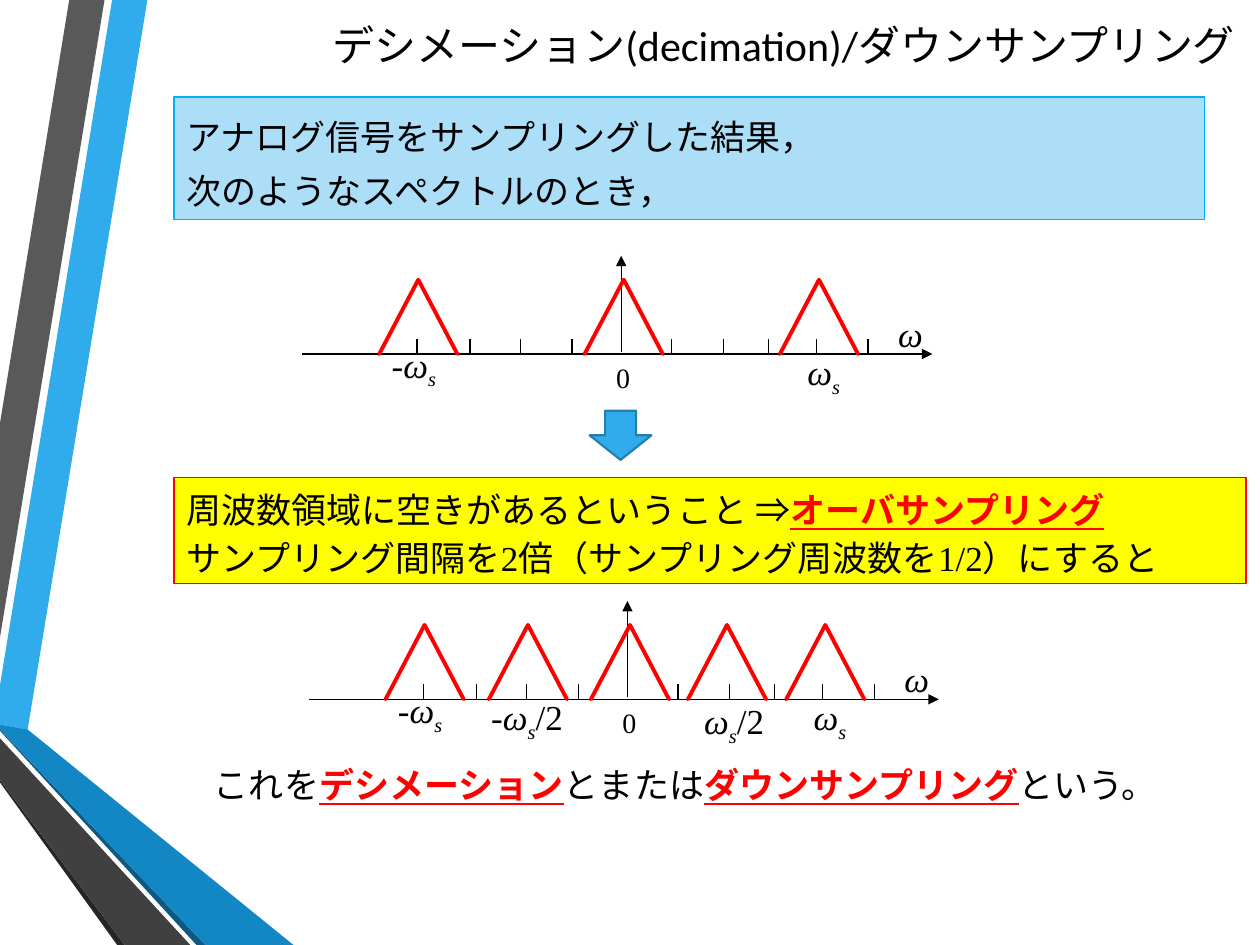
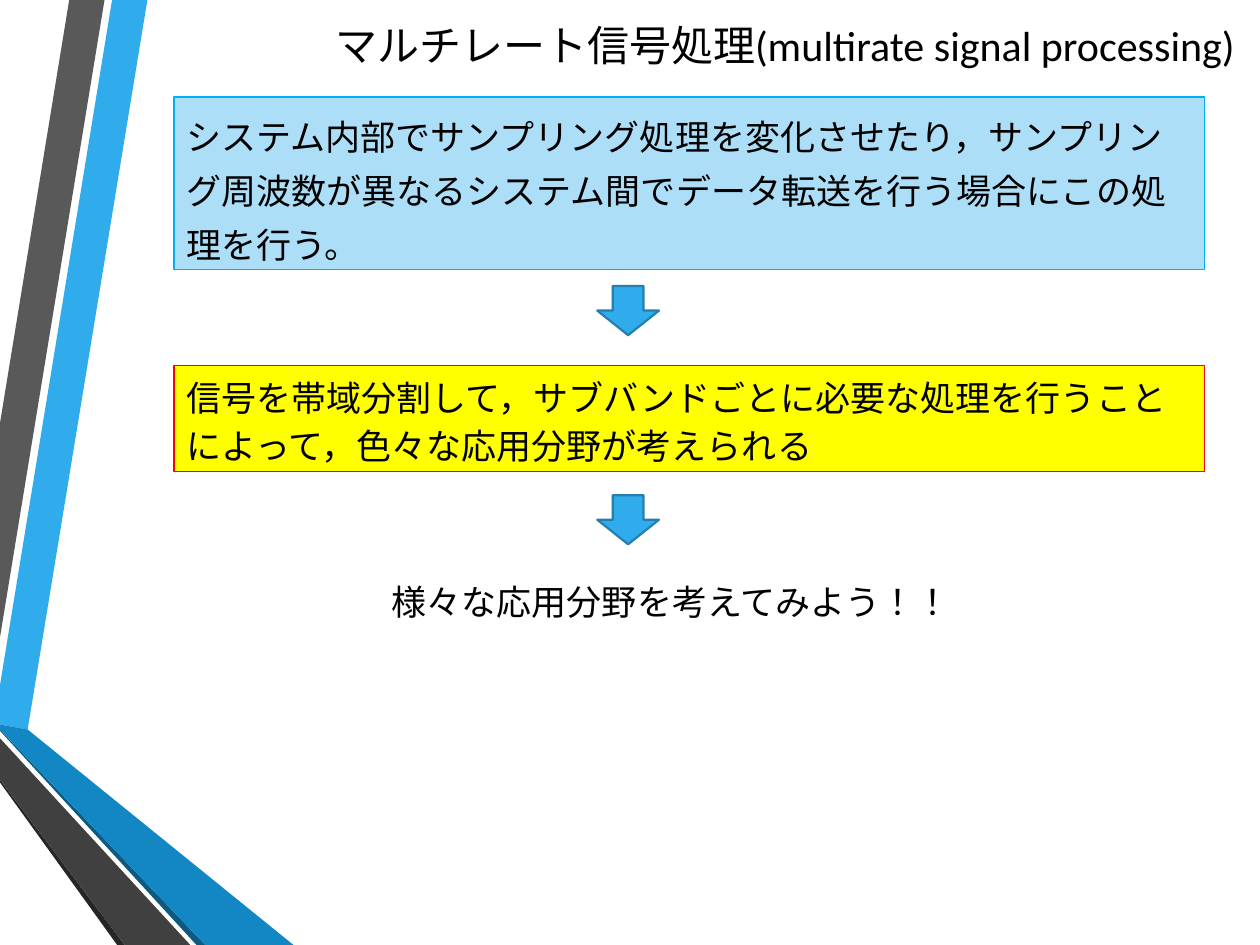
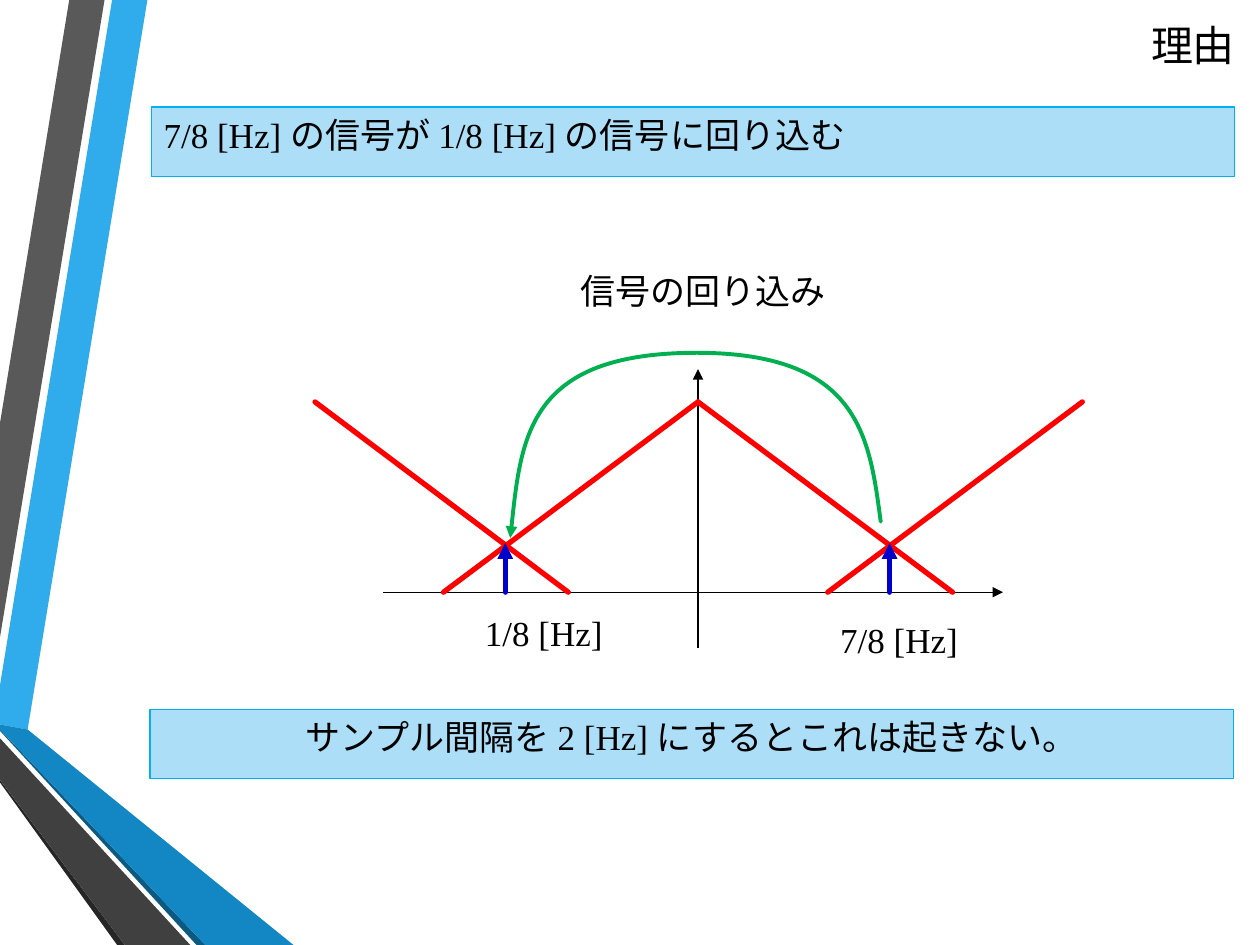
"""Build three slides on decimation and multirate signal processing."""
from dataclasses import dataclass

from lxml import etree
from pptx import Presentation
from pptx.dml.color import RGBColor
from pptx.enum.lang import MSO_LANGUAGE_ID
from pptx.enum.shapes import MSO_CONNECTOR, MSO_SHAPE
from pptx.enum.text import MSO_ANCHOR, PP_ALIGN
from pptx.oxml.ns import qn
from pptx.util import Inches, Pt

JAPANESE = MSO_LANGUAGE_ID.JAPANESE
STRAIGHT = MSO_CONNECTOR.STRAIGHT
RECTANGLE, DOWN_ARROW = MSO_SHAPE.RECTANGLE, MSO_SHAPE.DOWN_ARROW
MIDDLE = MSO_ANCHOR.MIDDLE
LEFT, CENTER, RIGHT = PP_ALIGN.LEFT, PP_ALIGN.CENTER, PP_ALIGN.RIGHT


@dataclass(frozen=True)
class Theme:
    ink: str = "000000"
    key: str = "FF0000"
    sky: str = "30ACEC"
    arrow_edge: str = "247FAF"
    pale: str = "ACDEF7"
    pale_edge: str = "00B0F0"
    yellow: str = "FFFF00"
    tone: str = "0000CC"
    wrap: str = "00B050"
    title_font: str = "Calibri"
    body_font: str = "Times New Roman"
    title_size: int = 24
    body_size: int = 20
    zero_size: int = 16


THEME = Theme()
PALE = (THEME.pale, THEME.pale_edge)
YELLOW = (THEME.yellow, THEME.key)


def add_text(slide, box, paragraphs, spacing=24, align=LEFT, panel=None,
             font=THEME.body_font, size=THEME.body_size):
    place = [Inches(length) for length in box]
    if panel:
        shape = slide.shapes.add_shape(RECTANGLE, *place)
        shape.shadow.inherit = False
        shape.fill.solid()
        shape.fill.fore_color.rgb = RGBColor.from_string(panel[0])
        shape.line.color.rgb = RGBColor.from_string(panel[1])
        shape.line.width = Pt(0.75)
    else:
        shape = slide.shapes.add_textbox(*place)
    frame = shape.text_frame
    frame.word_wrap = True
    frame.vertical_anchor = MSO_ANCHOR.TOP
    for index, runs in enumerate(paragraphs):
        paragraph = frame.paragraphs[0] if index == 0 else frame.add_paragraph()
        paragraph.alignment = align
        if spacing:
            paragraph.line_spacing = Pt(spacing)
        paragraph.font.name = font
        paragraph.font.size = Pt(size)
        paragraph.font.color.rgb = RGBColor.from_string(THEME.ink)
        paragraph.font.language_id = JAPANESE
        for words, role in [(runs, "")] if isinstance(runs, str) else runs:
            run = paragraph.add_run()
            run.text = words
            if role == "key":
                run.font.bold = run.font.underline = True
                run.font.color.rgb = RGBColor.from_string(THEME.key)
            elif role in ("symbol", "index"):
                run.font.italic = True
                if role == "index":
                    run.font._element.set("baseline", "-25000")
    return frame


def stroke(shape, color, width, arrow):
    shape.line.color.rgb = RGBColor.from_string(color)
    shape.line.width = Pt(width)
    outline = shape._element.spPr.find(qn("a:ln"))
    if width > 1:
        outline.set("cap", "rnd")
        etree.SubElement(outline, qn("a:round"))
    if arrow:
        etree.SubElement(outline, qn("a:tailEnd"), type="triangle")
    etree.SubElement(shape._element.spPr, qn("a:effectLst"))


prs = Presentation()
prs.slide_width, prs.slide_height = Inches(10), Inches(7.5)
blank = prs.slide_layouts[6]
titles = [
    "デシメーション(decimation)/ダウンサンプリング",
    "マルチレート信号処理(multirate signal processing)",
    "理由",
]
decimation, multirate, reason = slides = [prs.slides.add_slide(blank) for _ in titles]

bands = [
    (THEME.sky, [(0, 5.44), (0, 5.75), (0.22, 5.79), (1.17, 0), (0.89, 0)]),
    ("595959", [(0.83, 0), (0.55, 0), (0, 3.36), (0, 5.06)]),
    ("262626", [(0, 6.19), (0, 6.21), (0.93, 7.5), (0.99, 7.5)]),
    ("0C5A82", [(0, 5.79), (0, 5.8), (1.56, 7.5), (1.63, 7.5)]),
    ("1287C3", [(0, 5.79), (1.63, 7.5), (2.33, 7.5), (0.22, 5.79), (0, 5.75)]),
    ("404040", [(0, 6.19), (0.99, 7.5), (1.51, 7.5), (0, 5.86)]),
]
for color, corners in bands:
    start, *rest = [(Inches(x), Inches(y)) for x, y in corners]
    outline = decimation.shapes.build_freeform(*start)
    outline.add_line_segments(rest, close=True)
    band = outline.convert_to_shape()
    band.shadow.inherit = False
    band.fill.solid()
    band.fill.fore_color.rgb = RGBColor.from_string(color)
    band.line.fill.background()
    blank.shapes.element.append(band.element)

for slide, title in zip(slides, titles):
    heading = add_text(slide, (1.47, 0.02, 8.43, 0.67), [title], None, RIGHT,
                       font=THEME.title_font, size=THEME.title_size)
    heading.vertical_anchor = MIDDLE

for slide, left, top in [(decimation, 4.68, 3.26), (multirate, 4.74, 2.27),
                         (multirate, 4.74, 3.93)]:
    step = slide.shapes.add_shape(DOWN_ARROW, Inches(left), Inches(top),
                                  Inches(0.49), Inches(0.39))
    step.shadow.inherit = False
    step.fill.solid()
    step.fill.fore_color.rgb = RGBColor.from_string(THEME.sky)
    step.line.color.rgb = RGBColor.from_string(THEME.arrow_edge)
    step.line.width = Pt(1.25)

add_text(decimation, (1.38, 0.77, 8.18, 0.97),
         ["アナログ信号をサンプリングした結果，", "次のようなスペクトルのとき，"],
         31, panel=PALE)
add_text(decimation, (1.38, 3.79, 8.51, 0.84), [
    [("周波数領域に空きがあるということ ⇒", ""), ("オーバサンプリング", "key")],
    "サンプリング間隔を2倍（サンプリング周波数を1/2）にすると",
], 27, panel=YELLOW)
add_text(decimation, (1.6, 5.97, 7.97, 0.53), [[
    ("これを", ""), ("デシメーション", "key"), ("とまたは", ""),
    ("ダウンサンプリング", "key"), ("という。", ""),
]], 27)

minus_omega, omega = ("-ω", "symbol"), ("ω", "symbol")
sampling, half = ("s", "index"), ("/2", "")
labels = [
    (7.03, -0.38, [omega]),
    (3.01, -0.09, [minus_omega, sampling]),
    (6.31, -0.03, [omega, sampling]),
]
half_labels = [
    (5.44, 0, [omega, sampling, half]),
    (3.75, -0.03, [minus_omega, sampling, half]),
]
peaks, half_peaks = [3.32, 4.95, 6.5], [4.14, 5.72]
ticks = [3.31, 3.73, 4.13, 4.54, 5.33, 5.74, 6.1, 6.48, 6.89]
lines = []
for shift, axis_y, spectrum_peaks, spectrum_labels in [
    (0, 2.81, peaks, labels),
    (0.05, 5.55, peaks + half_peaks, labels + half_labels),
]:
    axes = [((2.4, 0), (7.4, 0)), ((4.93, -0.02), (4.93, -0.78))]
    marks = [((x, 0), (x, -0.12)) for x in ticks]
    slopes = [((x, -0.59), (x + side, 0)) for x in spectrum_peaks for side in (-0.31, 0.31)]
    for segments, color, width, arrow in [(axes, THEME.ink, 0.75, True),
                                          (marks, THEME.ink, 0.75, False),
                                          (slopes, THEME.key, 2.25, False)]:
        for ends in segments:
            start, end = [(x + shift, y + axis_y) for x, y in ends]
            lines.append((decimation, start, end, color, width, arrow))
    zero = add_text(decimation, (4.74 + shift, axis_y + 0.13, 0.41, 0.24), ["0"],
                    10, CENTER, size=THEME.zero_size)
    zero.paragraphs[0].space_before = zero.paragraphs[0].space_after = Pt(6)
    for left, drop, runs in spectrum_labels:
        add_text(decimation, (left + shift, axis_y + drop, 0.82, 0.51), [runs])

add_text(multirate, (1.38, 0.77, 8.18, 1.37), [
    "システム内部でサンプリング処理を変化させたり，サンプリング周波数が異なる"
    "システム間でデータ転送を行う場合にこの処理を行う。"], 31, panel=PALE)
add_text(multirate, (1.38, 2.9, 8.18, 0.84), [
    "信号を帯域分割して，サブバンドごとに必要な処理を行うことによって，"
    "色々な応用分野が考えられる"], 27, panel=YELLOW)
add_text(multirate, (3.01, 4.52, 5.35, 0.53), ["様々な応用分野を考えてみよう！！"], 27)

add_text(reason, (1.2, 0.85, 8.6, 0.55),
         ["7/8 [Hz] の信号が 1/8 [Hz] の信号に回り込む"], panel=PALE)
add_text(reason, (1.19, 5.63, 8.6, 0.55),
         ["サンプル間隔を 2 [Hz] にするとこれは起きない。"], align=CENTER, panel=PALE)
for left, top, width, words in [(6.57, 4.86, 1.28, "7/8 [Hz]"),
                                (3.75, 4.8, 1.28, "1/8 [Hz]"),
                                (4.51, 2.09, 2.2, "信号の回り込み")]:
    add_text(reason, (left, top, width, 0.45), [words])

base, crest = 4.7, 3.19
lines += [
    (reason, (3.04, base), (7.96, base), THEME.ink, 0.75, True),
    (reason, (5.54, 5.14), (5.54, 2.93), THEME.ink, 0.75, True),
]
for top_x, foot_x in [(5.54, 7.56), (5.54, 3.52), (8.59, 6.57), (2.5, 4.51)]:
    lines.append((reason, (top_x, crest), (foot_x, base), THEME.key, 3, False))
for tone_x in (7.06, 4.01):
    lines.append((reason, (tone_x, base), (tone_x, 4.31), THEME.tone, 3, True))

for slide, start, end, color, width, arrow in lines:
    ends = [Inches(length) for length in start + end]
    stroke(slide.shapes.add_connector(STRAIGHT, *ends), color, width, arrow)

start, *controls = [(Inches(x), Inches(y)) for x, y in [
    (6.99, 4.14), (6.9, 3.46), (6.82, 2.79), (5.5, 2.8),
    (4.19, 2.81), (4.13, 3.52), (4.05, 4.27)]]
outline = reason.shapes.build_freeform(*start)
outline.add_line_segments(controls, close=False)
foldback = outline.convert_to_shape()
foldback.fill.background()
segments = list(foldback.element.iter(qn("a:lnTo")))
for first in (0, 3):
    bend = etree.SubElement(segments[0].getparent(), qn("a:cubicBezTo"))
    for segment in segments[first:first + 3]:
        bend.append(segment[0])
for segment in segments:
    segment.getparent().remove(segment)
stroke(foldback, THEME.wrap, 2.25, True)

prs.save("out.pptx")
